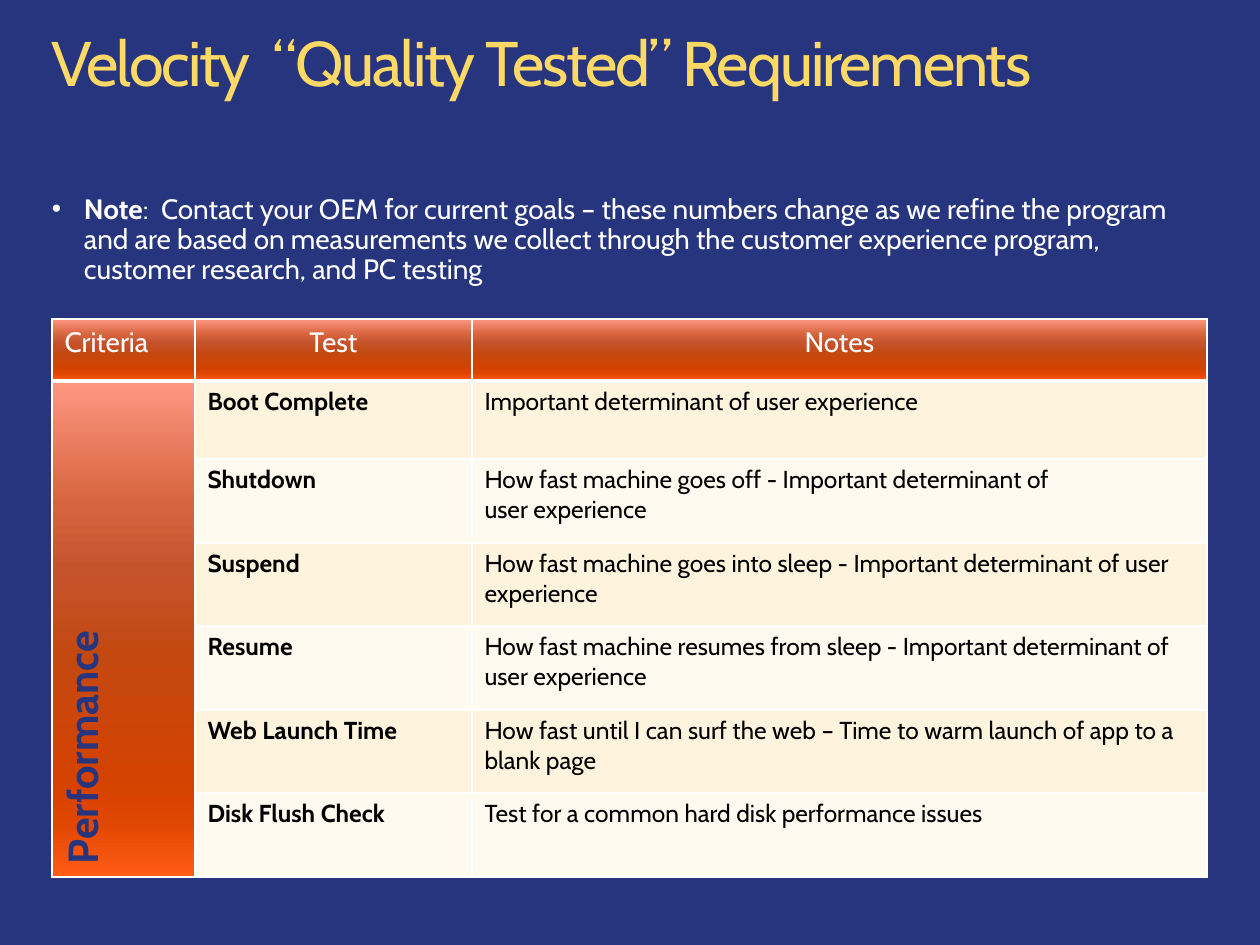
import pptx
import pptx.dml.color
import pptx.enum.text
import pptx.oxml
import pptx.oxml.ns
import pptx.util

PX = 914400 // 126  # one scale: 126 px to the inch
FONT = "Cabin"
WHITE, NAVY, YELLOW, BLACK = "FFFFFF", "26357E", "FFD966", "000000"
BANDS = ["FEF4DE", "FFFAEF"]
ORANGE = [(0, "FF9782"), (25, "D6643E"), (38, "C5532C"), (55, "C44911"),
          (80, "D34200"), (88, "DE4500"), (100, "FF5C16")]
ALIGN = pptx.enum.text.PP_ALIGN
ANCHOR = pptx.enum.text.MSO_ANCHOR

HEADERS = ["Criteria", "Test", "Notes"]
TESTS = [
    ("Boot Complete", "Important determinant of user experience"),
    ("Shutdown", "How fast machine goes off - Important determinant of \nuser experience"),
    ("Suspend", "How fast machine goes into sleep - Important determinant of user experience"),
    ("Resume", "How fast machine resumes from sleep - Important determinant of user experience"),
    ("Web Launch Time", "How fast until I can surf the web – Time to warm launch of app to a blank page"),
    ("Disk Flush Check", "Test for a common hard disk performance issues"),
]
COL_WIDTHS = [143, 277, 735]
ROW_HEIGHTS = [62, 78, 84, 83, 84, 83, 84]


def px(n):
    return pptx.util.Emu(n * PX)


def rgb(color):
    return pptx.dml.color.RGBColor.from_string(color)


def xml(text):
    return pptx.oxml.parse_xml(text.replace(">", " " + pptx.oxml.ns.nsdecls("a") + ">", 1))


def add_text(p, text, size=14, color=BLACK, bold=False, align=None, spacing=None):
    """Add formatted runs to a paragraph; a newline becomes a line break."""
    if align is not None:
        p.alignment = align
    for i, line in enumerate(text.split("\n")):
        if i:
            p.add_line_break()
        r = p.add_run()
        r.text = line
        r.font.name, r.font.size, r.font.bold = FONT, pptx.util.Pt(size), bold
        r.font.color.rgb = rgb(color)
        if spacing is not None:
            r.font._element.set("spc", str(spacing))


def place(sp, left, top, width, height):
    """Move a placeholder and return its first paragraph."""
    sp.left, sp.top, sp.width, sp.height = map(px, (left, top, width, height))
    tf = sp.text_frame
    tf.margin_left = tf.margin_top = tf.margin_right = tf.margin_bottom = 0
    tf.vertical_anchor = ANCHOR.TOP
    tf.auto_size = pptx.enum.text.MSO_AUTO_SIZE.NONE
    tf.word_wrap = True
    p = tf.paragraphs[0]
    p.alignment = ALIGN.LEFT
    p.line_spacing = 0.9
    p.space_before = pptx.util.Pt(0)
    return p


def add_bullet(p, indent):
    pPr = p._p.get_or_add_pPr()
    pPr.set("marL", str(px(indent)))
    pPr.set("indent", str(-px(indent)))
    pPr.append(xml(f'<a:buClr><a:srgbClr val="{WHITE}"/></a:buClr>'))
    pPr.append(xml('<a:buSzPct val="95000"></a:buSzPct>'))
    pPr.append(xml('<a:buFont typeface="Arial"></a:buFont>'))
    pPr.append(xml('<a:buChar char="•"></a:buChar>'))


def style_cell(cell, fill, bottom=1):
    """Set white borders, then a solid (hex) or gradient (stops) fill."""
    tcPr = cell._tc.get_or_add_tcPr()
    for side, width in zip("LRTB", (1, 1, 1, bottom)):
        tcPr.append(xml(f'<a:ln{side} w="{pptx.util.Pt(width)}"><a:solidFill>'
                        f'<a:srgbClr val="{WHITE}"/></a:solidFill></a:ln{side}>'))
    if isinstance(fill, str):
        cell.fill.solid()
        cell.fill.fore_color.rgb = rgb(fill)
    else:
        stops = "".join(f'<a:gs pos="{pos * 1000}"><a:srgbClr val="{color}"/></a:gs>'
                        for pos, color in fill)
        tcPr.append(xml(f'<a:gradFill><a:gsLst>{stops}</a:gsLst>'
                        '<a:lin ang="5400000" scaled="0"/></a:gradFill>'))


def add_requirements_table(s):
    frame = s.shapes.add_table(len(ROW_HEIGHTS), len(COL_WIDTHS), px(52), px(319),
                               px(sum(COL_WIDTHS)), px(sum(ROW_HEIGHTS)))
    table = frame.table
    for column, width in zip(table.columns, COL_WIDTHS):
        column.width = px(width)
    for row, height in zip(table.rows, ROW_HEIGHTS):
        row.height = px(height)

    # Header row
    for c, header in enumerate(HEADERS):
        cell = table.cell(0, c)
        style_cell(cell, ORANGE, bottom=3)
        add_text(cell.text_frame.paragraphs[0], header, size=16, color=WHITE,
                 align=ALIGN.CENTER if c else ALIGN.LEFT)

    # Test rows
    for i, (test, notes) in enumerate(TESTS):
        style_cell(table.cell(i + 1, 0), ORANGE)
        for c, text in enumerate((test, notes), start=1):
            cell = table.cell(i + 1, c)
            style_cell(cell, BANDS[i % 2])
            add_text(cell.text_frame.paragraphs[0], text, bold=c == 1)

    # Criteria cell spanning all tests
    criteria = table.cell(1, 0)
    criteria.merge(table.cell(len(TESTS), 0))
    criteria.vertical_anchor = ANCHOR.MIDDLE
    criteria._tc.get_or_add_tcPr().set("vert", "vert270")
    add_text(criteria.text_frame.paragraphs[0], "Performance", size=24, color=NAVY, bold=True)


def main():
    prs = pptx.Presentation()
    prs.slide_width, prs.slide_height = px(1260), px(945)
    s = prs.slides.add_slide(prs.slide_layouts[1])
    s.background.fill.solid()
    s.background.fill.fore_color.rgb = rgb(NAVY)

    # Title
    p = place(s.shapes.title, 52, 32, 1154, 92)
    add_text(p, "Velocity  “Quality Tested” Requirements", size=36, color=YELLOW, spacing=-120)

    # Note
    p = place(s.placeholders[1], 52, 195, 1154, 326)
    add_bullet(p, 32)
    add_text(p, "Note", size=16, color=WHITE, bold=True)
    add_text(p, ":  Contact your OEM for current goals – these numbers change as we refine "
                "the program and are based on measurements we collect through the customer "
                "experience program, customer research, and PC testing", size=16, color=WHITE)

    add_requirements_table(s)
    prs.save("out.pptx")


if __name__ == "__main__":
    main()
